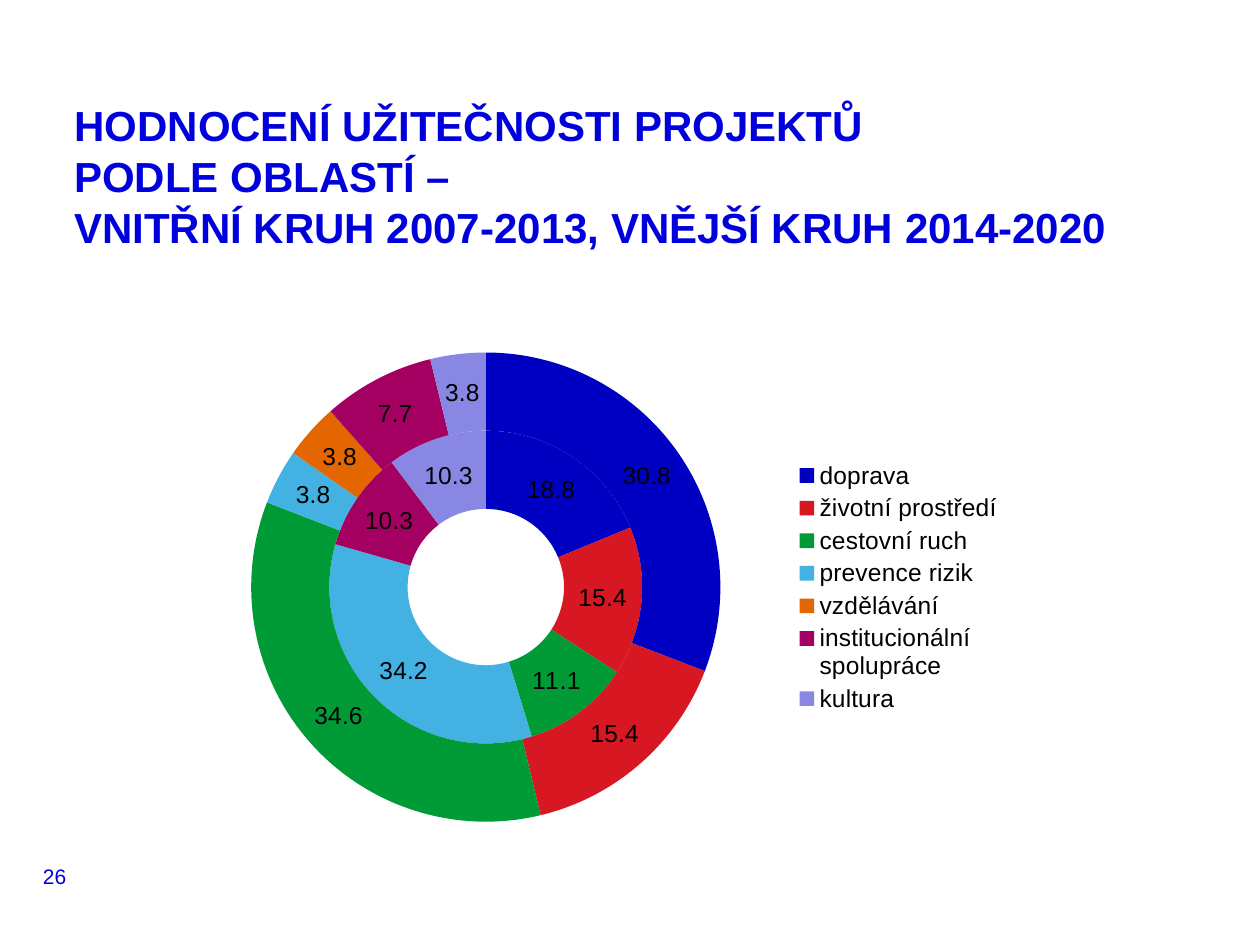
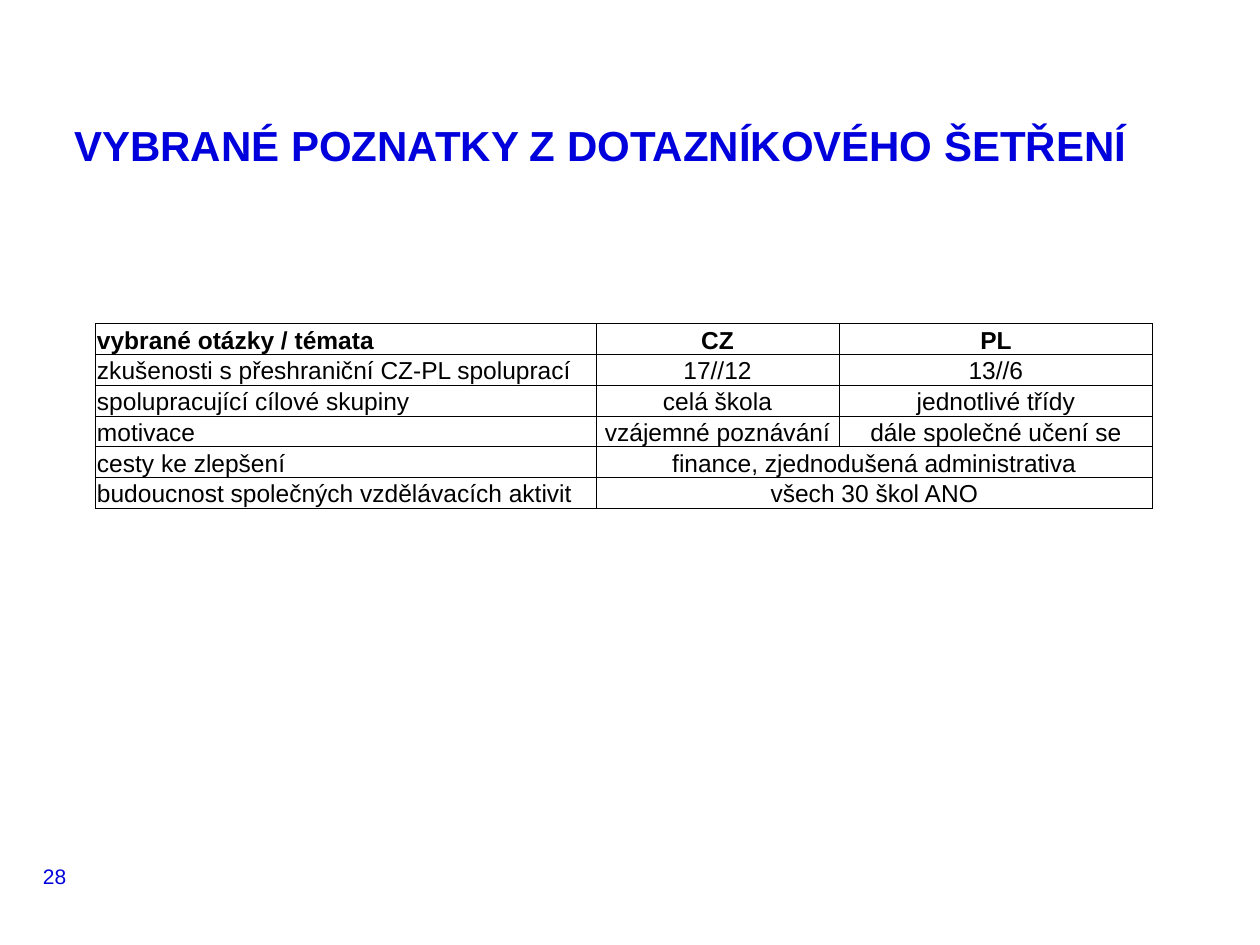
import pptx
import pptx.chart.data
import pptx.dml.color
import pptx.enum.chart
import pptx.enum.text
import pptx.oxml
import pptx.oxml.ns
import pptx.util

Inches = pptx.util.Inches
Pt = pptx.util.Pt
Align = pptx.enum.text.PP_ALIGN
Anchor = pptx.enum.text.MSO_ANCHOR

COLOURS = {
    "heading": "0000DC", "text": "000000",
    "doprava": "0000C3", "životní prostředí": "D71822",
    "cestovní ruch": "009B37", "prevence rizik": "43B2E3",
    "vzdělávání": "E36600", "institucionální spolupráce": "A40061",
    "kultura": "8888E4",
}
FONT = "Arial"
TITLE_FONT = {"name": FONT, "size": Pt(24), "bold": True}
NUMBER_FONT = {"name": FONT, "size": Pt(12), "bold": False}
BODY_FONT = {"name": FONT, "size": Pt(14), "bold": False}
HEADER_FONT = {**BODY_FONT, "bold": True}
NO_MARGINS = {f"margin_{side}": 0 for side in ("left", "right", "top", "bottom")}
CELL_FORMAT = {
    "margin_left": Inches(0.01), "margin_right": Inches(0.01),
    "margin_top": Inches(0.01), "margin_bottom": 0,
    "vertical_anchor": Anchor.BOTTOM,
}

USEFULNESS = {
    "2007-2013": (18.8, 15.4, 11.1, 34.2, 0, 10.3, 10.3),
    "2014-2020": (30.8, 15.4, 34.6, 3.8, 3.8, 7.7, 3.8),
}
AREAS = ("doprava", "životní prostředí", "cestovní ruch", "prevence rizik",
         "vzdělávání", "institucionální spolupráce", "kultura")
# A row with two entries has its answer spread over both countries.
FINDINGS = (
    ("vybrané otázky / témata", "CZ", "PL"),
    ("zkušenosti s přeshraniční CZ-PL spoluprací", "17//12", "13//6"),
    ("spolupracující cílové skupiny", "celá škola", "jednotlivé třídy"),
    ("motivace", "vzájemné poznávání", "dále společné učení se"),
    ("cesty ke zlepšení", "finance, zjednodušená administrativa"),
    ("budoucnost společných vzdělávacích aktivit", "všech 30 škol ANO"),
)
COLUMN_WIDTHS = (3.97, 1.93, 2.49)
ROW_HEIGHT = 0.21


def colour(name):
    return pptx.dml.color.RGBColor.from_string(COLOURS[name])


def apply(target, formats):
    for name, value in formats.items():
        setattr(target, name, value)


def style_font(font, formats, colour_name="text"):
    apply(font, formats)
    font.color.rgb = colour(colour_name)


def add_page(deck, title, number, line_spacing):
    page = deck.slides.add_slide(deck.slide_layouts.get_by_name("Title Only"))

    heading = page.shapes.title
    apply(heading, {"left": Inches(0.59), "top": Inches(0.79),
                    "width": Inches(8.82), "height": Inches(0.49)})
    frame = heading.text_frame
    apply(frame, {**NO_MARGINS, "word_wrap": True, "vertical_anchor": Anchor.TOP,
                  "auto_size": pptx.enum.text.MSO_AUTO_SIZE.NONE})
    frame.text = title
    para = frame.paragraphs[0]
    apply(para, {"alignment": Align.LEFT, "line_spacing": line_spacing})
    for span in para.runs:
        style_font(span.font, TITLE_FONT, "heading")

    box = page.shapes.add_textbox(Inches(0.34), Inches(6.81), Inches(0.21), Inches(0.28))
    apply(box.text_frame, {**NO_MARGINS, "word_wrap": False,
                           "vertical_anchor": Anchor.MIDDLE})
    box.text_frame.text = number
    style_font(box.text_frame.paragraphs[0].runs[0].font, NUMBER_FONT, "heading")
    return page


def add_rings(page):
    """Add a doughnut chart with one ring for each programme period."""
    data = pptx.chart.data.CategoryChartData()
    data.categories = AREAS
    for period, values in USEFULNESS.items():
        data.add_series(period, values)
    chart = page.shapes.add_chart(
        pptx.enum.chart.XL_CHART_TYPE.DOUGHNUT,
        Inches(1.43), Inches(2.66), Inches(6.63), Inches(4), data).chart
    chart.has_title = False
    style_font(chart.font, BODY_FONT)
    chart.has_legend = True
    apply(chart.legend, {"position": pptx.enum.chart.XL_LEGEND_POSITION.RIGHT,
                         "include_in_layout": False})
    style_font(chart.legend.font, BODY_FONT)

    plot = chart.plots[0]
    plot.vary_by_categories = True
    for ring in plot.series:
        # The empty sections of the number format hide the zero.
        apply(ring.data_labels, {"show_value": True, "show_percentage": False,
                                 "number_format": "0.0;;",
                                 "number_format_is_linked": False})
        style_font(ring.data_labels.font, BODY_FONT)
        for index, area in enumerate(AREAS):
            look = ring.points[index].format
            look.fill.solid()
            look.fill.fore_color.rgb = colour(area)
            look.line.fill.background()


def add_borders(cell):
    properties = cell._tc.get_or_add_tcPr()
    for side in "LRTB":
        properties.append(pptx.oxml.parse_xml(
            f'<a:ln{side} {pptx.oxml.ns.nsdecls("a")} w="{Pt(0.5)}"><a:solidFill>'
            f'<a:srgbClr val="{COLOURS["text"]}"/></a:solidFill></a:ln{side}>'))


def add_findings(page):
    table = page.shapes.add_table(
        len(FINDINGS), len(COLUMN_WIDTHS), Inches(0.76), Inches(2.57),
        Inches(sum(COLUMN_WIDTHS)), Inches(ROW_HEIGHT * len(FINDINGS))).table
    apply(table, {"first_row": False, "horz_banding": False})
    for column, width in zip(table.columns, COLUMN_WIDTHS):
        column.width = Inches(width)

    for row_index, entries in enumerate(FINDINGS):
        table.rows[row_index].height = Inches(ROW_HEIGHT)
        for column_index in range(len(COLUMN_WIDTHS)):
            cell = table.cell(row_index, column_index)
            apply(cell, CELL_FORMAT)
            add_borders(cell)
            cell.fill.background()
            para = cell.text_frame.paragraphs[0]
            para.alignment = Align.CENTER if column_index else Align.LEFT
            if column_index < len(entries):
                span = para.add_run()
                span.text = entries[column_index]
                style_font(span.font, BODY_FONT if row_index else HEADER_FONT)
        if len(entries) < len(COLUMN_WIDTHS):
            table.cell(row_index, 1).merge(table.cell(row_index, 2))


def main():
    deck = pptx.Presentation()
    apply(deck, {"slide_width": Inches(10), "slide_height": Inches(7.5)})
    add_rings(add_page(
        deck,
        "HODNOCENÍ UŽITEČNOSTI PROJEKTŮ\vPODLE OBLASTÍ –\v"
        "VNITŘNÍ KRUH 2007-2013, VNĚJŠÍ KRUH 2014-2020",
        "26", Pt(29)))
    add_findings(add_page(
        deck, "VYBRANÉ POZNATKY Z DOTAZNÍKOVÉHO ŠETŘENÍ", "28", Pt(40)))
    deck.save("out.pptx")


if __name__ == "__main__":
    main()
